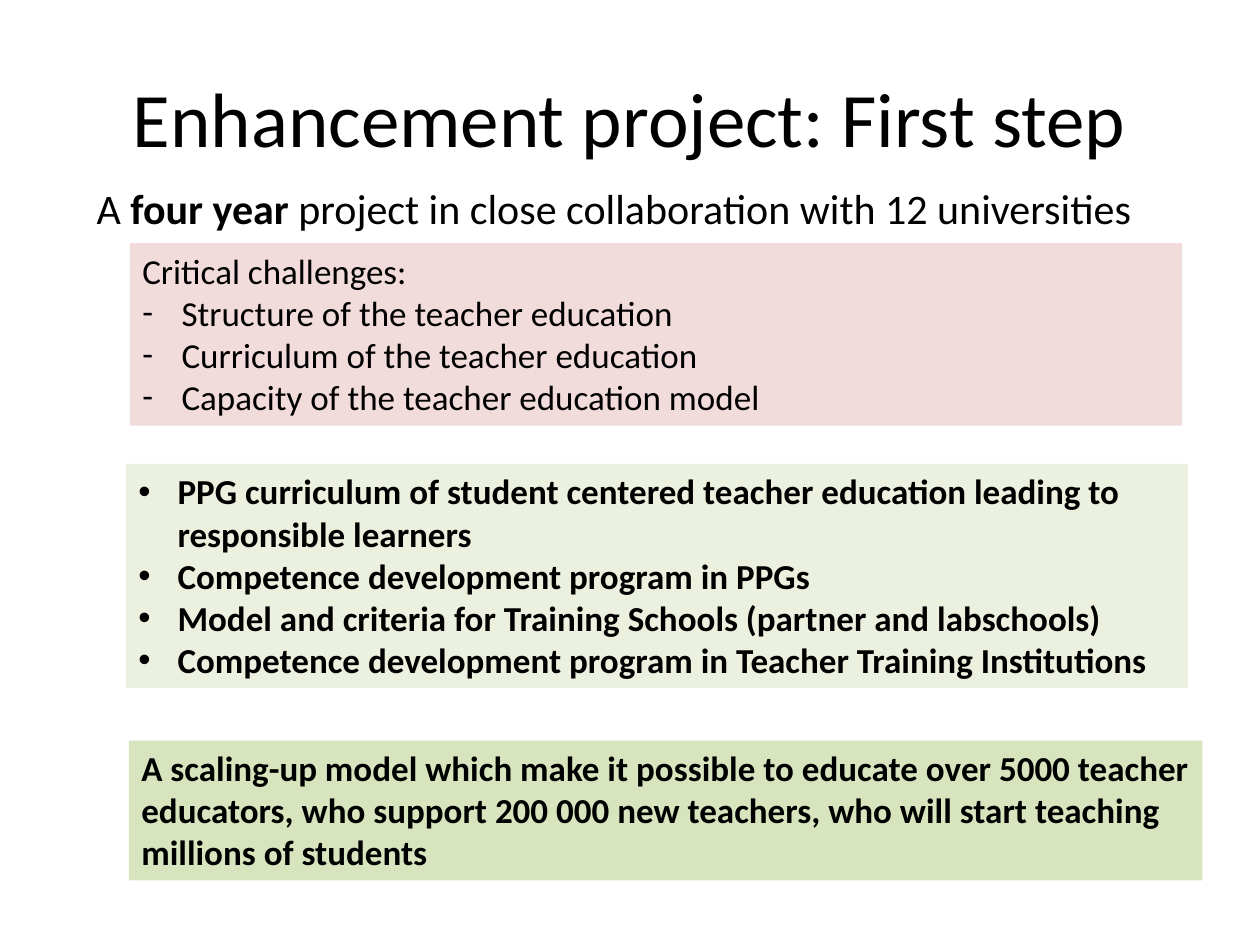
from dataclasses import dataclass
from typing import Optional

import lxml.etree
import pptx
import pptx.dml.color
import pptx.enum.text
import pptx.oxml.ns
import pptx.util

Cm = pptx.util.Cm
RGBColor = pptx.dml.color.RGBColor
PP_ALIGN = pptx.enum.text.PP_ALIGN
MSO_ANCHOR = pptx.enum.text.MSO_ANCHOR

BLACK = RGBColor(0x00, 0x00, 0x00)
PINK = RGBColor(0xF2, 0xDC, 0xDB)
PALE_GREEN = RGBColor(0xEB, 0xF1, 0xDE)
GREEN = RGBColor(0xD7, 0xE4, 0xBD)
FONT = "Calibri"
BULLET_INDENT = Cm(0.79)


@dataclass
class Line:
    runs: list[tuple[str, bool]]  # wording and whether it is bold
    bullet: str = ""


@dataclass
class TextBlock:
    left: float
    top: float
    width: float
    height: float
    size: int
    lines: list[Line]
    fill: Optional[RGBColor] = None
    alignment: PP_ALIGN = PP_ALIGN.LEFT
    anchor: MSO_ANCHOR = MSO_ANCHOR.TOP


def bullet_lines(bullet: str, bold: bool, texts: list[str]) -> list[Line]:
    return [Line([(text, bold)], bullet) for text in texts]


TITLE = TextBlock(
    1.27, 0.76, 22.86, 3.18, 44,
    [Line([("Enhancement project: First step", False)])],
    alignment=PP_ALIGN.CENTER, anchor=MSO_ANCHOR.MIDDLE,
)
SUBTITLE = TextBlock(
    1.7, 3.56, 22.81, 1.27, 24,
    [Line([
        ("A ", False),
        ("four year ", True),
        ("project in close collaboration with 12 universities", False),
    ])],
)
CHALLENGES = TextBlock(
    2.62, 4.9, 21.21, 3.68, 20,
    [Line([("Critical challenges:", False)])] + bullet_lines("-", False, [
        "Structure of the teacher education",
        "Curriculum of the teacher education",
        "Capacity of the teacher education model",
    ]),
    fill=PINK,
)
MEASURES = TextBlock(
    2.54, 9.35, 21.41, 4.52, 20,
    bullet_lines("•", True, [
        "PPG curriculum of student centered teacher education leading to "
        "responsible learners",
        "Competence development program in PPGs",
        "Model and criteria for Training Schools (partner and labschools)",
        "Competence development program in Teacher Training Institutions",
    ]),
    fill=PALE_GREEN,
)
SCALING = TextBlock(
    2.6, 14.93, 21.64, 2.82, 20,
    [Line([(
        "A scaling-up model which make it possible to educate over 5000 teacher "
        "educators, who support 200 000 new teachers, who will start teaching "
        "millions of students", True,
    )])],
    fill=GREEN,
)


def set_bullet(paragraph, character: str) -> None:
    properties = paragraph._p.get_or_add_pPr()
    properties.set("marL", str(BULLET_INDENT))
    properties.set("indent", str(-BULLET_INDENT))
    qn = pptx.oxml.ns.qn
    lxml.etree.SubElement(properties, qn("a:buFont"), typeface="Arial" if character == "•" else FONT)
    lxml.etree.SubElement(properties, qn("a:buChar"), char=character)


def draw_block(slide, block: TextBlock) -> None:
    shape = slide.shapes.add_textbox(
        Cm(block.left), Cm(block.top), Cm(block.width), Cm(block.height)
    )
    if block.fill is not None:
        shape.fill.solid()
        shape.fill.fore_color.rgb = block.fill
    text_frame = shape.text_frame
    text_frame.word_wrap = True
    text_frame.vertical_anchor = block.anchor
    text_frame.text = "\n".join(
        "".join(text for text, _ in line.runs) for line in block.lines
    )
    for paragraph, line in zip(text_frame.paragraphs, block.lines):
        paragraph.alignment = block.alignment
        if line.bullet:
            set_bullet(paragraph, line.bullet)
        # Split the paragraph into its plain and bold runs
        paragraph.clear()
        for text, bold in line.runs:
            run = paragraph.add_run()
            run.text = text
            run.font.name = FONT
            run.font.size = pptx.util.Pt(block.size)
            run.font.bold = bold
            run.font.color.rgb = BLACK


def main() -> None:
    presentation = pptx.Presentation()
    presentation.slide_width = Cm(25.4)
    presentation.slide_height = Cm(19.05)
    slide = presentation.slides.add_slide(presentation.slide_layouts[6])

    # Heading, then the coloured panels from top to bottom
    for block in (TITLE, SUBTITLE, CHALLENGES, MEASURES, SCALING):
        draw_block(slide, block)

    presentation.save("out.pptx")


if __name__ == "__main__":
    main()
